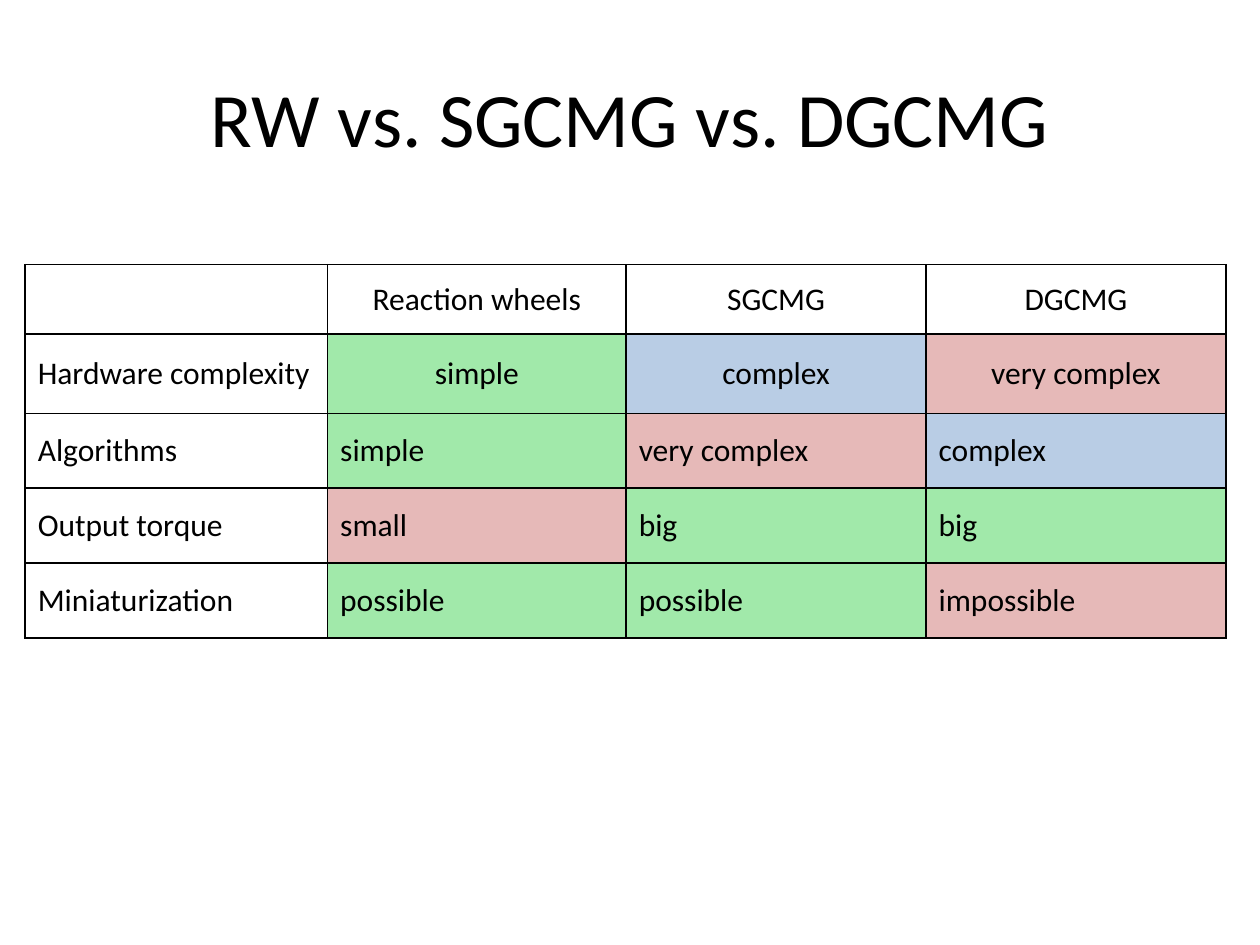
from lxml import etree
from pptx import Presentation
from pptx.dml.color import RGBColor
from pptx.enum.text import MSO_ANCHOR, PP_ALIGN
from pptx.oxml.ns import qn
from pptx.util import Pt

LEFT, CENTER = PP_ALIGN.LEFT, PP_ALIGN.CENTER
MIDDLE = MSO_ANCHOR.MIDDLE

BLACK = "000000"
GOOD, FAIR, POOR = "A1E9AA", "B9CDE5", "E6B9B8"
RATING_FILLS = {
    "simple": GOOD, "big": GOOD, "possible": GOOD,
    "complex": FAIR,
    "very complex": POOR, "small": POOR, "impossible": POOR,
}
ROWS = [
    ["", "Reaction wheels", "SGCMG", "DGCMG"],
    ["Hardware complexity", "simple", "complex", "very complex"],
    ["Algorithms", "simple", "very complex", "complex"],
    ["Output torque", "small", "big", "big"],
    ["Miniaturization", "possible", "possible", "impossible"],
]
COLUMN_WIDTHS = [172.8, 170.64, 171.36, 171.36]
ROW_HEIGHTS = [39.6, 45.36, 42.84, 42.84, 42.84]


def format_paragraph(paragraph, size, alignment):
    paragraph.alignment = alignment
    font_format = {"name": "Calibri", "size": Pt(size), "bold": False}
    for name, value in font_format.items():
        setattr(paragraph.font, name, value)
    paragraph.font.color.rgb = RGBColor.from_string(BLACK)


def add_borders(cell, color, width):
    properties = cell._tc.get_or_add_tcPr()
    for side in ("a:lnL", "a:lnR", "a:lnT", "a:lnB"):
        line = etree.SubElement(properties, qn(side), w=str(Pt(width)))
        fill = etree.SubElement(line, qn("a:solidFill"))
        etree.SubElement(fill, qn("a:srgbClr"), val=color)


presentation = Presentation()
presentation.slide_width, presentation.slide_height = Pt(720), Pt(540)
slide = presentation.slides.add_slide(presentation.slide_layouts[5])

title = slide.shapes.title
title_place = {"left": 36, "top": 21.6, "width": 648, "height": 90}
for name, value in title_place.items():
    setattr(title, name, Pt(value))
title.text_frame.text = "RW vs. SGCMG vs. DGCMG"
title.text_frame.vertical_anchor = MIDDLE
format_paragraph(title.text_frame.paragraphs[0], 44, CENTER)

table = slide.shapes.add_table(
    len(ROWS), len(COLUMN_WIDTHS), Pt(14.4), Pt(151.2),
    Pt(sum(COLUMN_WIDTHS)), Pt(sum(ROW_HEIGHTS))).table
table.first_row = table.horz_banding = False
for column, width in zip(table.columns, COLUMN_WIDTHS):
    column.width = Pt(width)
for row, height in zip(table.rows, ROW_HEIGHTS):
    row.height = Pt(height)

for row_index, row_texts in enumerate(ROWS):
    for column_index, text in enumerate(row_texts):
        cell = table.cell(row_index, column_index)
        add_borders(cell, BLACK, 1)
        if text in RATING_FILLS:
            cell.fill.solid()
            cell.fill.fore_color.rgb = RGBColor.from_string(RATING_FILLS[text])
        else:
            cell.fill.background()
        cell.vertical_anchor = MIDDLE
        cell.text = text
        centered = row_index < 2 and column_index > 0
        format_paragraph(cell.text_frame.paragraphs[0], 18, CENTER if centered else LEFT)

presentation.save("out.pptx")
